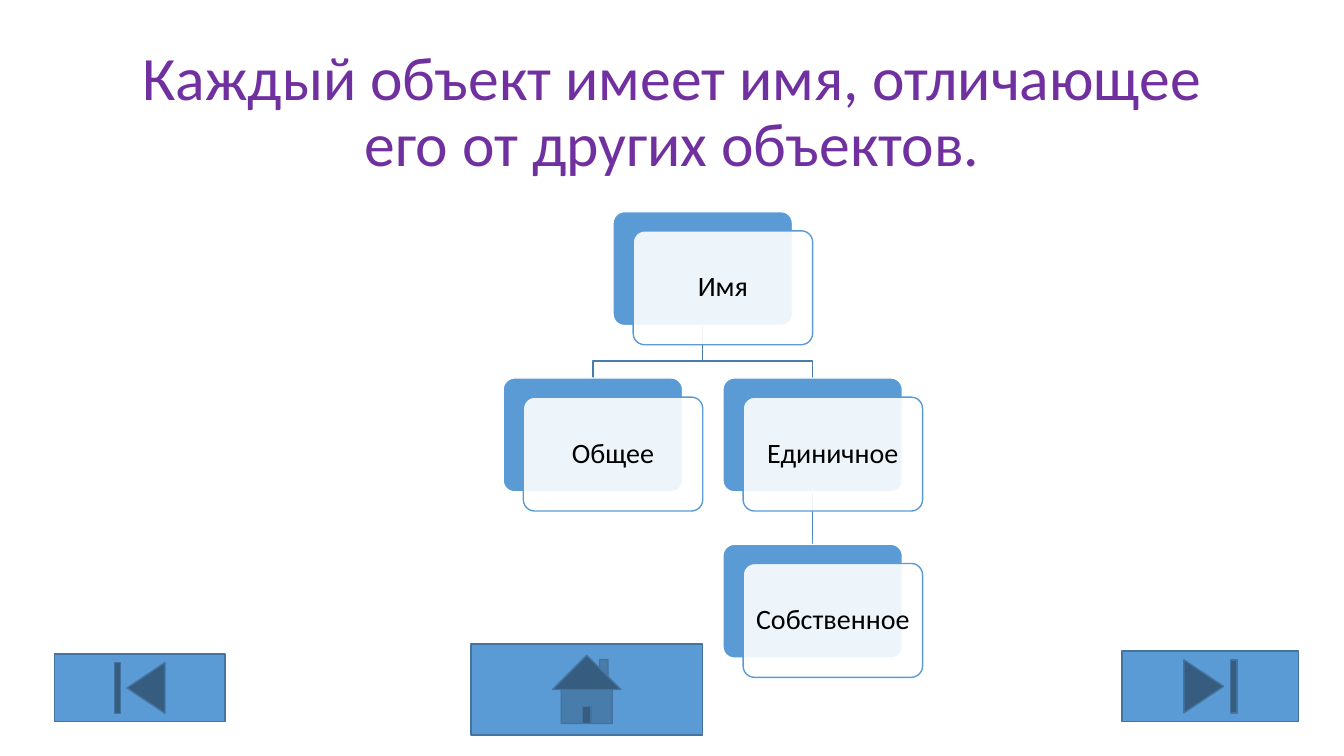
from dataclasses import dataclass

from lxml.etree import SubElement
from pptx import Presentation
from pptx.dml.color import RGBColor
from pptx.enum.shapes import MSO_SHAPE as Preset
from pptx.enum.text import MSO_ANCHOR as Anchor, PP_ALIGN as Align
from pptx.oxml.ns import qn
from pptx.shapes.autoshape import Shape
from pptx.slide import Slide
from pptx.util import Inches, Pt

BLUE = "5B9BD5"
WHITE = "FFFFFF"
CARD_WIDTH, CARD_HEIGHT = 1.78, 1.13
CARD_SHIFT = 0.19
LABEL_INSET = 0.03
BEND_HEIGHT = 0.17


@dataclass(frozen=True)
class Node:
    label: str
    left: float
    top: float

    @property
    def center(self) -> float:
        return self.left + CARD_WIDTH / 2

    @property
    def bottom(self) -> float:
        return self.top + CARD_HEIGHT


@dataclass(frozen=True)
class Link:
    parent: Node
    child: Node
    color: str


@dataclass(frozen=True)
class Button:
    preset: Preset
    left: float
    top: float
    width: float
    height: float


NAME = Node("Имя", 6.08, 2.1)
COMMON = Node("Общее", 4.99, 3.75)
SINGLE = Node("Единичное", 7.17, 3.75)
PROPER = Node("Собственное", 7.17, 5.4)
NODES = [NAME, COMMON, SINGLE, PROPER]
LINKS = [
    Link(SINGLE, PROPER, "538DC1"),
    Link(NAME, SINGLE, "497CAB"),
    Link(NAME, COMMON, "497CAB"),
]
BUTTONS = [
    Button(Preset.ACTION_BUTTON_HOME, 4.67, 6.39, 2.3, 0.9),
    Button(Preset.ACTION_BUTTON_BEGINNING, 0.54, 6.49, 1.69, 0.67),
    Button(Preset.ACTION_BUTTON_END, 11.13, 6.46, 1.75, 0.7),
]


def rgb(color: str) -> RGBColor:
    return RGBColor.from_string(color)


def outline(shape: Shape, color: str) -> None:
    shape.shadow.inherit = False
    shape.line.color.rgb = rgb(color)
    shape.line.width = Pt(1)


def add_preset(page: Slide, preset: Preset, left: float, top: float,
               width: float, height: float, fill: str, line: str) -> Shape:
    shape = page.shapes.add_shape(
        preset, Inches(left), Inches(top), Inches(width), Inches(height))
    shape.fill.solid()
    shape.fill.fore_color.rgb = rgb(fill)
    outline(shape, line)
    return shape


def add_text(page: Slide, text: str, left: float, top: float, width: float,
             height: float, size: int, color: str, inset: float) -> None:
    box = page.shapes.add_textbox(
        Inches(left), Inches(top), Inches(width), Inches(height))
    frame = box.text_frame
    frame.word_wrap = True
    frame.vertical_anchor = Anchor.MIDDLE
    frame.margin_left = frame.margin_right = Inches(inset)
    frame.margin_top = frame.margin_bottom = Inches(min(inset, 0.08))
    para = frame.paragraphs[0]
    para.alignment = Align.CENTER
    para.line_spacing = 0.9
    span = para.add_run()
    span.text = text
    span.font.name = "Calibri"
    span.font.size = Pt(size)
    span.font.color.rgb = rgb(color)


def add_link(page: Slide, link: Link) -> None:
    start, end = link.parent.center, link.child.center
    bend = link.child.top - BEND_HEIGHT
    points = [(end, link.child.top)]
    if start != end:
        points = [(start, bend), (end, bend)] + points
    builder = page.shapes.build_freeform(
        Inches(start), Inches(link.parent.bottom))
    builder.add_line_segments(
        [(Inches(x), Inches(y)) for x, y in points], close=False)
    shape = builder.convert_to_shape()
    shape.fill.background()
    outline(shape, link.color)


def add_card(page: Slide, left: float, top: float,
             fill: str, line: str) -> Shape:
    card = add_preset(page, Preset.ROUNDED_RECTANGLE, left, top,
                      CARD_WIDTH, CARD_HEIGHT, fill, line)
    card.adjustments[0] = 0.1
    return card


def add_node(page: Slide, node: Node) -> None:
    left, top = node.left + CARD_SHIFT + 0.01, node.top + CARD_SHIFT
    add_card(page, node.left, node.top, BLUE, WHITE)
    front = add_card(page, left, top, WHITE, BLUE)
    tint = front.fill._xPr.find(qn("a:solidFill"))[0]
    SubElement(tint, qn("a:alpha")).set("val", "90000")
    add_text(page, node.label, left + LABEL_INSET, top + LABEL_INSET,
             CARD_WIDTH - 2 * LABEL_INSET, CARD_HEIGHT - 2 * LABEL_INSET,
             20, "000000", 0.08)


def main() -> None:
    deck = Presentation()
    deck.slide_width, deck.slide_height = Inches(13.33), Inches(7.5)
    page = deck.slides.add_slide(deck.slide_layouts[6])
    add_text(page, "Каждый объект имеет имя, отличающее его от других объектов.",
             0.92, 0.4, 11.5, 1.45, 44, "7030A0", 0.1)
    for link in LINKS:
        add_link(page, link)
    for node in NODES:
        add_node(page, node)
    for button in BUTTONS:
        add_preset(page, button.preset, button.left, button.top,
                   button.width, button.height, BLUE, "43739E")
    deck.save("out.pptx")


if __name__ == "__main__":
    main()
